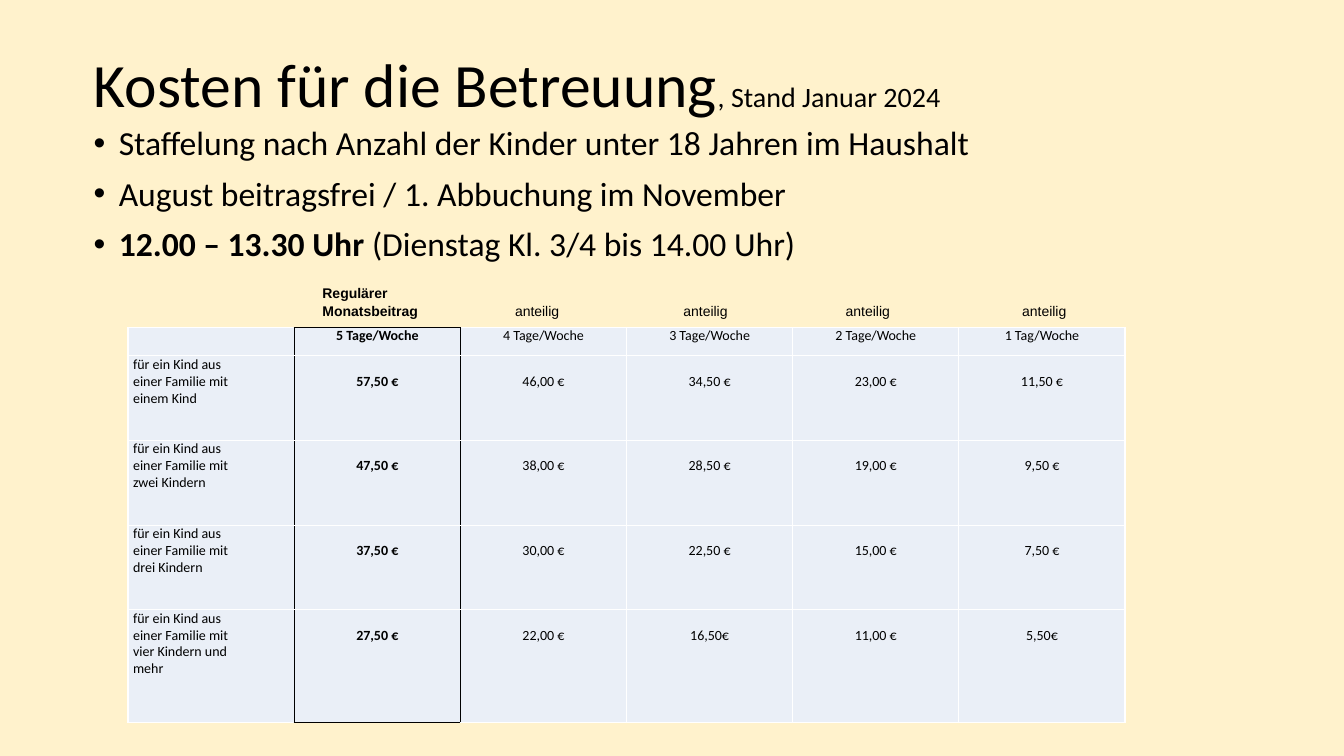
from pptx import Presentation
from pptx import util as u
from pptx.dml.color import RGBColor
from pptx.enum import text as t
from pptx.oxml.xmlchemy import OxmlElement

BLACK, WHITE, CREAM, PALE_BLUE = "000000", "FFFFFF", "FFF2CC", "EAEFF7"
REGULAR = 1
BULLETS = [
    [("Staffelung nach Anzahl der Kinder unter 18 Jahren im Haushalt", False)],
    [("August beitragsfrei / 1. Abbuchung im November", False)],
    [("12.00 – 13.30 Uhr ", True), ("(Dienstag Kl. 3/4 bis 14.00 Uhr)", False)],
]
DAYS = ["", "5 Tage/Woche", "4 Tage/Woche", "3 Tage/Woche", "2 Tage/Woche", "1 Tag/Woche"]
FEES = [
    ("einem Kind", "57,50 €", "46,00 €", "34,50 €", "23,00 €", "11,50 €"),
    ("zwei Kindern", "47,50 €", "38,00 €", "28,50 €", "19,00 €", "9,50 €"),
    ("drei Kindern", "37,50 €", "30,00 €", "22,50 €", "15,00 €", "7,50 €"),
    ("vier Kindern und\nmehr", "27,50 €", "22,00 €", "16,50€", "11,00 €", "5,50€"),
]
ROW_HEIGHTS = [0.28, 0.84, 0.84, 0.84, 1.12]
CAPTION_TABS = [2.27, 4.18, 5.85, 7.46, 9.21]


def colour(code):
    """Turn a hex string into a colour."""
    return RGBColor.from_string(code)


def child(parent, tag, **attributes):
    """Append an XML element with attributes and return it."""
    element = OxmlElement(tag)
    for key, value in attributes.items():
        element.set(key, str(value))
    parent.append(element)
    return element


def write(paragraph, content, size, font="Calibri", bold=False, align=t.PP_ALIGN.LEFT):
    """Add a formatted run to a paragraph."""
    paragraph.alignment = align
    run = paragraph.add_run()
    run.text = content
    run.font.size, run.font.name, run.font.bold = u.Pt(size), font, bold
    run.font.color.rgb = colour(BLACK)


def place_title(slide, left, top, width, height):
    """Fill the title placeholder with heading and date."""
    title = slide.shapes.title
    title.left, title.top = u.Inches(left), u.Inches(top)
    title.width, title.height = u.Inches(width), u.Inches(height)
    title.text_frame.vertical_anchor = t.MSO_ANCHOR.MIDDLE
    heading = title.text_frame.paragraphs[0]
    heading.line_spacing = 0.9
    write(heading, "Kosten für die Betreuung", 44)
    write(heading, ", Stand Januar 2024", 20)


def add_frame(slide, left, top, width, height):
    """Add a wrapping text box and return its text frame."""
    box = slide.shapes.add_textbox(*map(u.Inches, (left, top, width, height)))
    box.text_frame.word_wrap = True
    return box.text_frame


def place_bullets(slide, left, top, width, height):
    """List the rules for the fees."""
    frame = add_frame(slide, left, top, width, height)
    for index, rule in enumerate(BULLETS):
        line = frame.add_paragraph() if index else frame.paragraphs[0]
        line.line_spacing = 0.9
        line.space_before = u.Pt(10 if index else 0)
        for content, bold in rule:
            write(line, content, 24, bold=bold)
        properties = line._p.get_or_add_pPr()
        properties.set("marL", str(u.Inches(0.25)))
        properties.set("indent", str(-u.Inches(0.25)))
        child(properties, "a:buFont", typeface="Arial")
        child(properties, "a:buChar", char="•")


def place_captions(slide, left, top, width, height):
    """Write the captions above the fee columns on tab stops."""
    frame = add_frame(slide, left, top, width, height)
    frame.margin_top = u.Inches(0.09)
    upper, lower = frame.paragraphs[0], frame.add_paragraph()
    write(upper, "\tRegulärer", 10, "Arial", bold=True)
    write(lower, "\tMonatsbeitrag", 10, "Arial", bold=True)
    write(lower, "\tanteilig" * 4, 10, "Arial")
    lower.space_before = u.Pt(1.3)
    for line in (upper, lower):
        stops = child(line._p.get_or_add_pPr(), "a:tabLst")
        for stop in CAPTION_TABS:
            child(stops, "a:tab", pos=u.Inches(stop), algn="l")


def set_borders(cell, black_sides):
    """Draw thin cell borders, black on the named sides and white elsewhere."""
    properties = cell._tc.get_or_add_tcPr()
    for index, side in enumerate("LRTB"):
        line = OxmlElement(f"a:ln{side}")
        line.set("w", str(u.Pt(1)))
        fill = child(line, "a:solidFill")
        child(fill, "a:srgbClr", val=BLACK if side in black_sides else WHITE)
        properties.insert(index, line)


def black_sides(row, column):
    """Name the sides of a cell that outline the regular fee column."""
    if column == REGULAR:
        return "LR" + ("T" if row == 0 else "") + ("B" if row == len(FEES) else "")
    return {REGULAR - 1: "R", REGULAR + 1: "L"}.get(column, "")


def fill_cell(cell, content, row, column):
    """Write and format one cell of the fee table."""
    cell.fill.solid()
    cell.fill.fore_color.rgb = colour(PALE_BLUE)
    cell.margin_left = cell.margin_right = u.Inches(0.05)
    cell.margin_top = u.Inches(0.17 if row and column else 0)
    cell.margin_bottom = 0
    set_borders(cell, black_sides(row, column))
    frame = cell.text_frame
    if not content:
        child(frame.paragraphs[0]._p, "a:endParaRPr", sz=1000)
        return
    for index, words in enumerate(content.split("\n")):
        line = frame.add_paragraph() if index else frame.paragraphs[0]
        write(line, words, 10, bold=column == REGULAR,
              align=t.PP_ALIGN.CENTER if column else t.PP_ALIGN.LEFT)


def place_fees(slide, left, top, width, height):
    """Build the table of monthly fees."""
    rows = [DAYS] + [(f"für ein Kind aus\neiner Familie mit\n{family}", *amounts)
                     for family, *amounts in FEES]
    fees = slide.shapes.add_table(len(rows), len(DAYS),
                                  *map(u.Inches, (left, top, width, height))).table
    fees.first_row = fees.horz_banding = False
    for column in fees.columns:
        column.width = u.Inches(width / len(DAYS))
    for row, contents in enumerate(rows):
        fees.rows[row].height = u.Inches(ROW_HEIGHTS[row])
        for column, content in enumerate(contents):
            fill_cell(fees.cell(row, column), content, row, column)


def main():
    """Build and save the slide."""
    deck = Presentation()
    deck.slide_width, deck.slide_height = u.Inches(13.33), u.Inches(7.5)
    slide = deck.slides.add_slide(deck.slide_layouts[5])
    slide.background.fill.solid()
    slide.background.fill.fore_color.rgb = colour(CREAM)
    place_title(slide, 0.83, 0.26, 11.5, 1.22)
    place_bullets(slide, 0.83, 1.21, 11.5, 1.5)
    place_fees(slide, 1.27, 3.25, 9.89, sum(ROW_HEIGHTS))
    place_captions(slide, 0.83, 2.73, 10.1, 0.5)
    deck.save("out.pptx")


if __name__ == "__main__":
    main()
